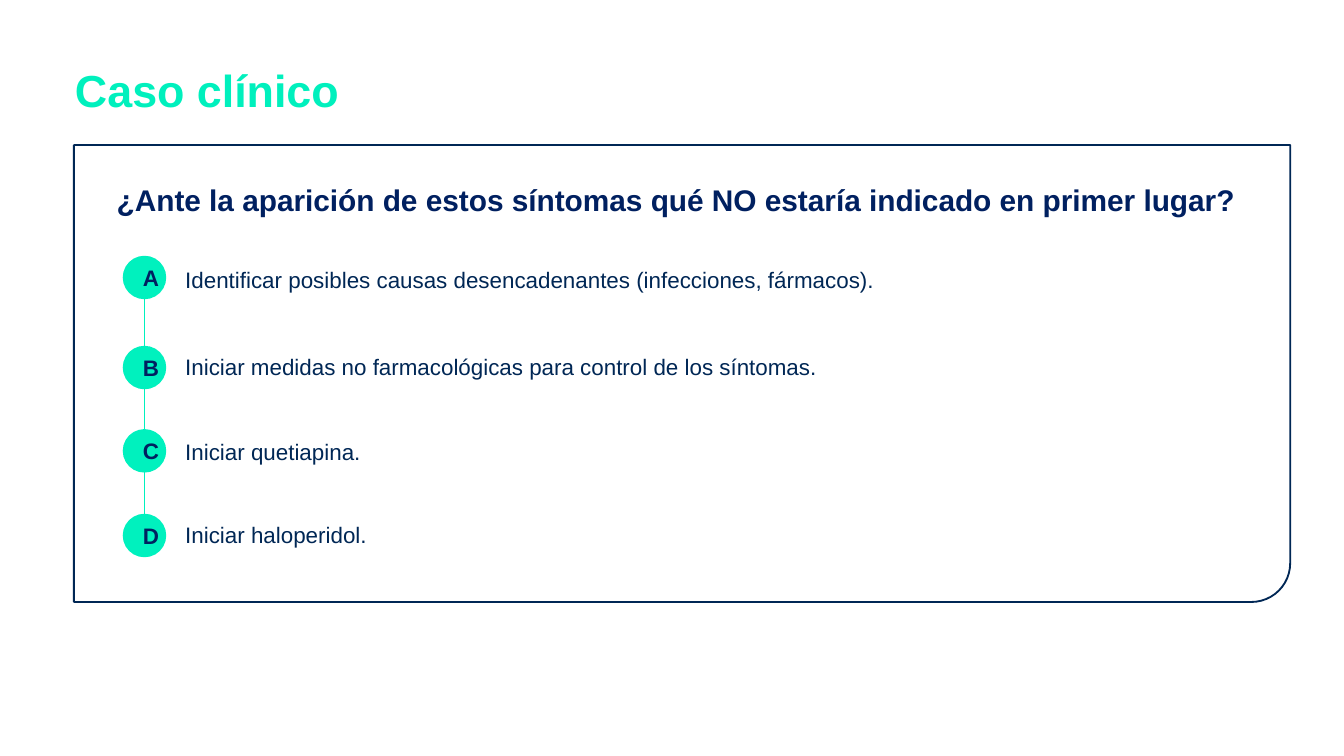
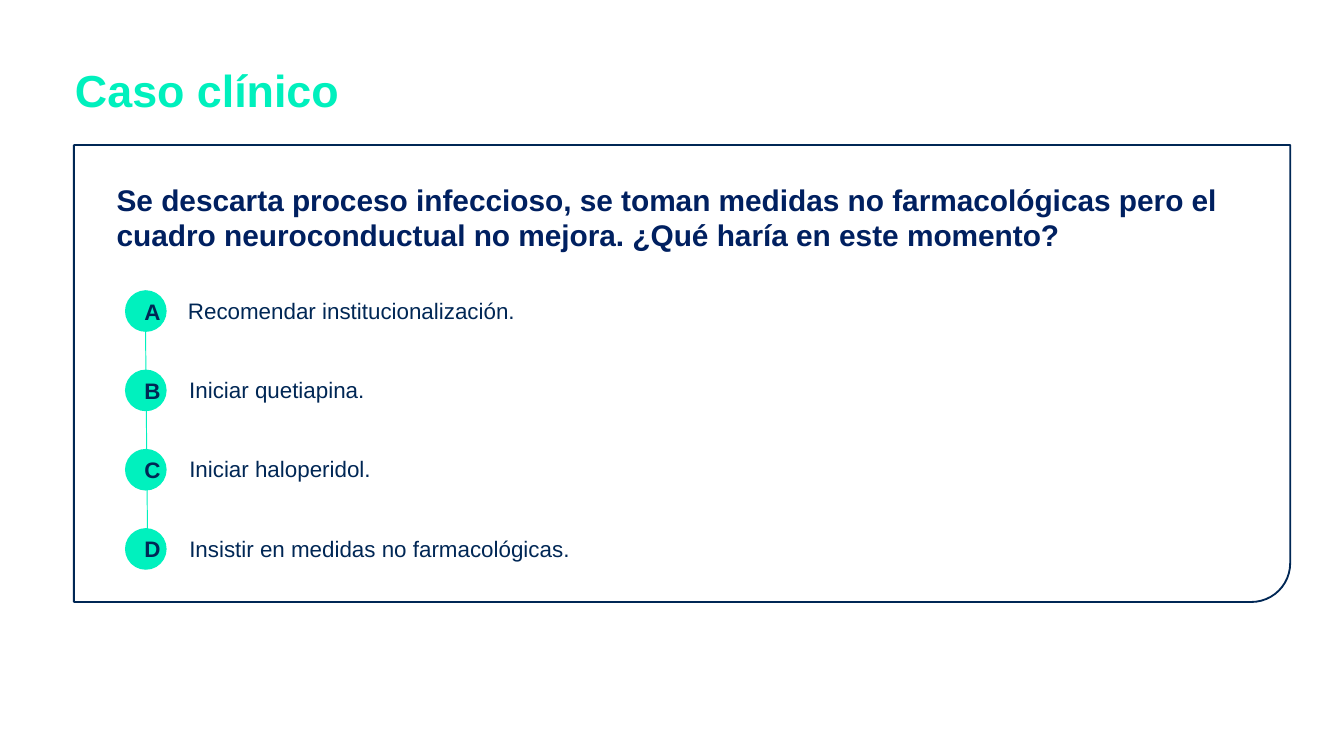
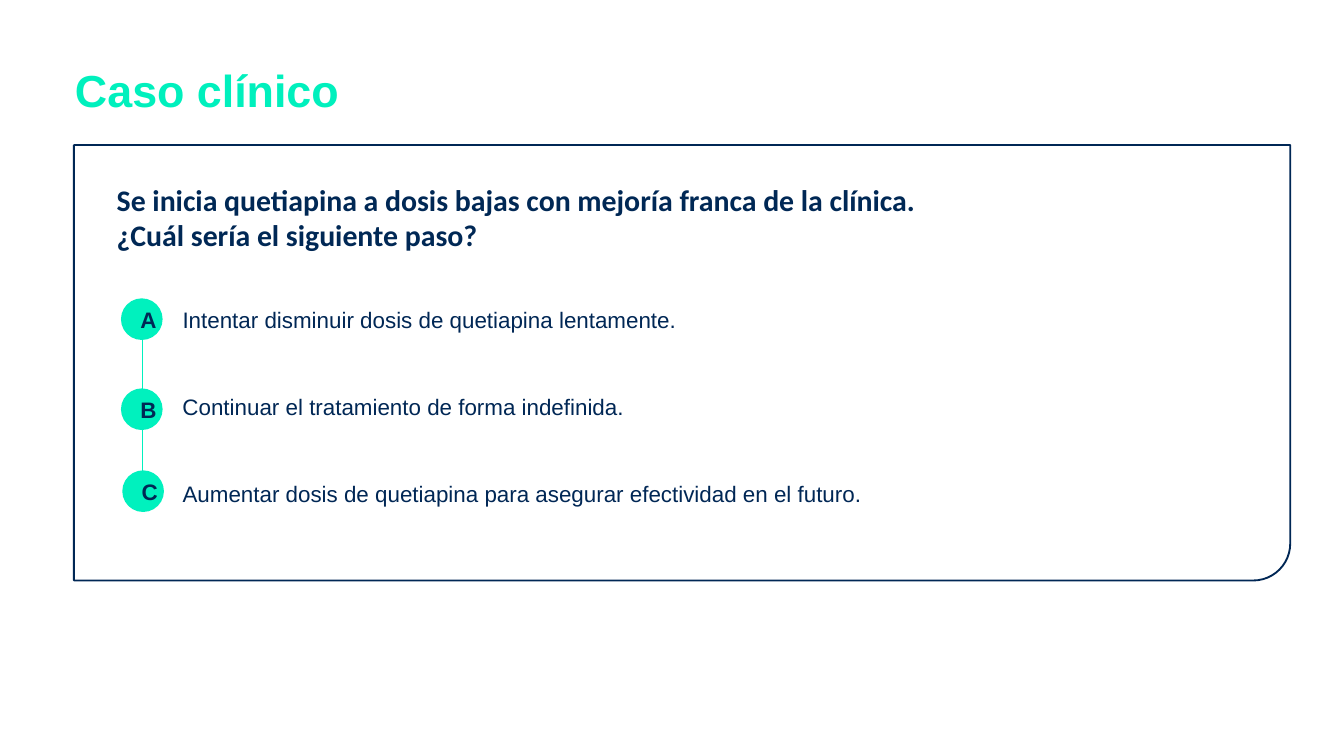
from dataclasses import dataclass

from lxml import etree
from pptx import Presentation
from pptx import util as u
from pptx.dml.color import RGBColor
from pptx.enum import shapes, text
from pptx.oxml import ns

WHITE = RGBColor(0xFF, 0xFF, 0xFF)
MINT = RGBColor(0x00, 0xF1, 0xBE)
TITLE_MINT = RGBColor(0x00, 0xF0, 0xBD)
NAVY = RGBColor(0x00, 0x27, 0x55)
DEEP_BLUE = RGBColor(0x00, 0x20, 0x60)
SLATE_NAVY = RGBColor(0x00, 0x28, 0x55)

SLIDE_WIDTH = 10
SLIDE_HEIGHT = SLIDE_WIDTH * 9 / 16
MARKER_SIZE = 0.31
LABEL_HEIGHT = 0.3
LABEL_WIDTHS = (5.58, 6.47, 5.58, 5.58)
EVEN_TOPS = tuple(2.16 + 0.59 * row for row in range(4))


@dataclass
class Question:
    heading: str
    heading_size: tuple
    options: tuple
    marker_lefts: tuple
    marker_tops: tuple
    label_lefts: tuple
    label_tops: tuple
    line_start: tuple
    line_end: tuple
    heading_font: str = "Arial"
    heading_color: RGBColor = DEEP_BLUE
    letter_color: RGBColor = NAVY
    frame_height: float = 3.4
    outlined: bool = False


QUESTIONS = (
    Question(
        heading="¿Ante la aparición de estos síntomas qué NO estaría indicado en primer lugar?",
        heading_size=(8.6, 0.37),
        options=(
            "Identificar posibles causas desencadenantes (infecciones, fármacos).",
            "Iniciar medidas no farmacológicas para control de los síntomas.",
            "Iniciar quetiapina.",
            "Iniciar haloperidol.",
        ),
        marker_lefts=(0.92,) * 4,
        marker_tops=(1.91, 2.58, 3.2, 3.83),
        label_lefts=(1.28,) * 4,
        label_tops=(1.93, 2.58, 3.21, 3.83),
        line_start=(0.92 + MARKER_SIZE / 2, 1.95),
        line_end=(0.92 + MARKER_SIZE / 2, 4.07),
        letter_color=DEEP_BLUE,
        outlined=True,
    ),
    Question(
        heading="Se descarta proceso infeccioso, se toman medidas no farmacológicas pero el "
                "cuadro neuroconductual no mejora. ¿Qué haría en este momento?",
        heading_size=(8.6, 0.64),
        options=(
            "Recomendar institucionalización.",
            "Iniciar quetiapina.",
            "Iniciar haloperidol.",
            "Insistir en medidas no farmacológicas.",
        ),
        marker_lefts=(0.93,) * 4,
        marker_tops=EVEN_TOPS,
        label_lefts=(1.3, 1.31, 1.31, 1.31),
        label_tops=EVEN_TOPS,
        line_start=(1.08, 2.16),
        line_end=(1.1, 4.23),
    ),
    Question(
        heading="Se inicia quetiapina a dosis bajas con mejoría franca de la clínica. "
                "¿Cuál sería el siguiente paso?",
        heading_size=(6.25, 0.64),
        options=(
            "Intentar disminuir dosis de quetiapina lentamente.",
            "Continuar el tratamiento de forma indefinida.",
            "Aumentar dosis de quetiapina para asegurar efectividad en el futuro.",
        ),
        marker_lefts=(0.9, 0.9, 0.91),
        marker_tops=(2.22, 2.89, 3.5),
        label_lefts=(1.26,) * 3,
        label_tops=(2.23, 2.88, 3.52),
        line_start=(1.06, 2.25),
        line_end=(1.06, 3.71),
        heading_font="Calibri",
        heading_color=SLATE_NAVY,
        letter_color=SLATE_NAVY,
        frame_height=3.24,
    ),
)


def inches(*lengths):
    return [u.Inches(length) for length in lengths]


def write(shape, words, size, color, bold=False, font="Arial"):
    shape.text_frame.text = words
    para = shape.text_frame.paragraphs[0]
    span = para.runs[0]
    span.font.name = font
    span.font.size = u.Pt(size)
    span.font.bold = bold
    span.font.color.rgb = color
    return para


def add_text(slide, place, words, size, color, bold=False, font="Arial", grow=True):
    box = slide.shapes.add_textbox(*inches(*place))
    box.text_frame.word_wrap = True
    if grow:
        box.text_frame.auto_size = text.MSO_AUTO_SIZE.SHAPE_TO_FIT_TEXT
    return write(box, words, size, color, bold, font)


def add_shape(slide, kind, place, fill, line=None):
    shape = slide.shapes.add_shape(kind, *inches(*place))
    shape.shadow.inherit = False
    shape.fill.solid()
    shape.fill.fore_color.rgb = fill
    if line is None:
        shape.line.fill.background()
    else:
        shape.line.color.rgb = line
        shape.line.width = u.Pt(1)
    return shape


def add_title(slide):
    para = add_text(slide, (0.46, 0.46, 8.14, 0.65), "Caso clínico", 24, TITLE_MINT,
                    bold=True, grow=False)
    para.line_spacing = 0.9


def add_frame(slide, height):
    frame = add_shape(slide, shapes.MSO_SHAPE.ROUND_1_RECTANGLE, (0.55, 1.08, 9.05, height),
                      WHITE, NAVY)
    frame.adjustments[0] = 0.085
    frame._element.spPr.xfrm.set("flipV", "1")


def add_thread(slide, start, end):
    thread = slide.shapes.add_connector(shapes.MSO_CONNECTOR.STRAIGHT, *inches(*start, *end))
    thread.line.color.rgb = MINT
    thread.line.width = u.Pt(0.5)
    etree.SubElement(thread._element.spPr, ns.qn("a:effectLst"))


def add_marker(slide, left, top, letter, color, outlined):
    marker = add_shape(slide, shapes.MSO_SHAPE.FLOWCHART_CONNECTOR,
                       (left, top, MARKER_SIZE, MARKER_SIZE), MINT, MINT if outlined else None)
    para = write(marker, letter, 12, color, bold=True)
    para.alignment = text.PP_ALIGN.CENTER


def add_options(slide, question):
    add_thread(slide, question.line_start, question.line_end)
    markers = zip(question.marker_lefts, question.marker_tops)
    labels = zip(question.label_lefts, question.label_tops, LABEL_WIDTHS)
    for letter, option, marker, label in zip("ABCD", question.options, markers, labels):
        add_marker(slide, *marker, letter, question.letter_color, question.outlined)
        add_text(slide, (*label, LABEL_HEIGHT), option, 12, NAVY)


def add_question(deck, question):
    slide = deck.slides.add_slide(deck.slide_layouts[6])
    add_frame(slide, question.frame_height)
    add_text(slide, (0.77, 1.3, *question.heading_size), question.heading, 16,
             question.heading_color, bold=True, font=question.heading_font)
    add_options(slide, question)
    add_title(slide)


def main():
    deck = Presentation()
    deck.slide_width, deck.slide_height = inches(SLIDE_WIDTH, SLIDE_HEIGHT)
    for question in QUESTIONS:
        add_question(deck, question)
    deck.save("out.pptx")


if __name__ == "__main__":
    main()
